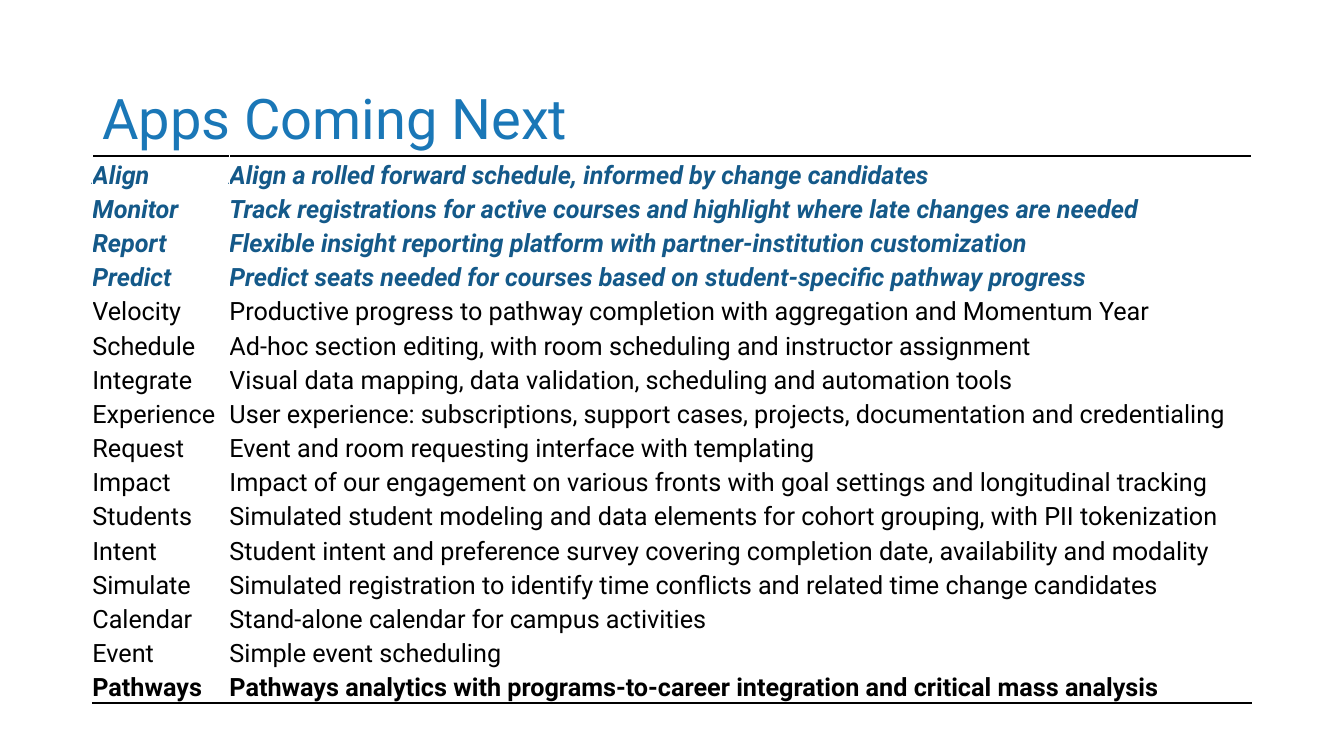
"""Builds the slide that lists the apps coming next."""
from typing import NamedTuple

from lxml.etree import SubElement
from pptx import Presentation
from pptx.dml.color import RGBColor
from pptx.enum.text import MSO_ANCHOR
from pptx.oxml.ns import qn
from pptx.util import Pt

COLORS = {
    "title": "1A77B7",
    "next": "145989",
    "text": "000000",
    "rule": "000000",
    "paper": "FFFFFF",
}
FONT = "Roboto"
LEFT, WIDTH = 66, 828
TABLE_TOP, ROW_HEIGHT = 111.6, 24.43
NAME_WIDTH = 97.92
MARGINS = ("margin_left", "margin_right", "margin_top", "margin_bottom")
STYLES = {
    "next": {"bold": True, "italic": True},
    "later": {"bold": False, "italic": False},
    "key": {"bold": True, "italic": False},
}


class App(NamedTuple):
    name: str
    purpose: str
    stage: str = "later"


APPS = [
    App("Align", "Align a rolled forward schedule, informed by change candidates", "next"),
    App("Monitor", "Track registrations for active courses and highlight where late changes are needed", "next"),
    App("Report", "Flexible insight reporting platform with partner-institution customization", "next"),
    App("Predict", "Predict seats needed for courses based on student-specific pathway progress", "next"),
    App("Velocity", "Productive progress to pathway completion with aggregation and Momentum Year"),
    App("Schedule", "Ad-hoc section editing, with room scheduling and instructor assignment"),
    App("Integrate", "Visual data mapping, data validation, scheduling and automation tools"),
    App("Experience", "User experience: subscriptions, support cases, projects, documentation and credentialing"),
    App("Request", "Event and room requesting interface with templating"),
    App("Impact", "Impact of our engagement on various fronts with goal settings and longitudinal tracking"),
    App("Students", "Simulated student modeling and data elements for cohort grouping, with PII tokenization"),
    App("Intent", "Student intent and preference survey covering completion date, availability and modality"),
    App("Simulate", "Simulated registration to identify time conflicts and related time change candidates"),
    App("Calendar", "Stand-alone calendar for campus activities"),
    App("Event", "Simple event scheduling"),
    App("Pathways", "Pathways analytics with programs-to-career integration and critical mass analysis", "key"),
]


def write(paragraph, text: str, color: str, **formats) -> None:
    run = paragraph.add_run()
    run.text = text
    run.font.color.rgb = RGBColor.from_string(COLORS[color])
    for attribute, value in {"name": FONT, **formats}.items():
        setattr(run.font, attribute, value)


def add_rule(cell, edge: str) -> None:
    properties = cell._tc.get_or_add_tcPr()
    line = SubElement(properties, qn(f"a:{edge}"), w=str(Pt(2)))
    properties.insert(0, line)
    fill = SubElement(line, qn("a:solidFill"))
    SubElement(fill, qn("a:srgbClr"), val=COLORS["rule"])


def add_title(slide, text: str) -> None:
    title = slide.shapes.add_textbox(Pt(LEFT), Pt(51.84), Pt(WIDTH), Pt(69.84))
    title.text_frame.word_wrap = True
    title.text_frame.vertical_anchor = MSO_ANCHOR.MIDDLE
    heading = title.text_frame.paragraphs[0]
    heading.line_spacing = 0.9
    write(heading, text, "title", size=Pt(40))


def fill_cell(cell, text: str, stage: str) -> None:
    cell.fill.solid()
    cell.fill.fore_color.rgb = RGBColor.from_string(COLORS["paper"])
    cell.vertical_anchor = MSO_ANCHOR.BOTTOM
    for margin in MARGINS:
        setattr(cell, margin, Pt(0))
    color = "next" if stage == "next" else "text"
    write(cell.text_frame.paragraphs[0], text, color, size=Pt(18), **STYLES[stage])


def add_app_table(slide, apps: list[App]) -> None:
    table = slide.shapes.add_table(
        len(apps), 2, Pt(LEFT), Pt(TABLE_TOP), Pt(WIDTH), Pt(ROW_HEIGHT * len(apps))
    ).table
    table.first_row = table.horz_banding = False
    for column, width in zip(table.columns, (NAME_WIDTH, WIDTH - NAME_WIDTH)):
        column.width = Pt(width)
    for row, app in zip(table.rows, apps):
        row.height = Pt(ROW_HEIGHT)
        for cell, text in zip(row.cells, (app.name, app.purpose)):
            fill_cell(cell, text, app.stage)
    for row_index, edge in ((0, "lnT"), (len(apps) - 1, "lnB")):
        for cell in table.rows[row_index].cells:
            add_rule(cell, edge)


def main() -> None:
    deck = Presentation()
    deck.slide_width, deck.slide_height = Pt(960), Pt(540)
    slide = deck.slides.add_slide(deck.slide_layouts[6])
    add_title(slide, "Apps Coming Next")
    add_app_table(slide, APPS)
    deck.save("out.pptx")


if __name__ == "__main__":
    main()
